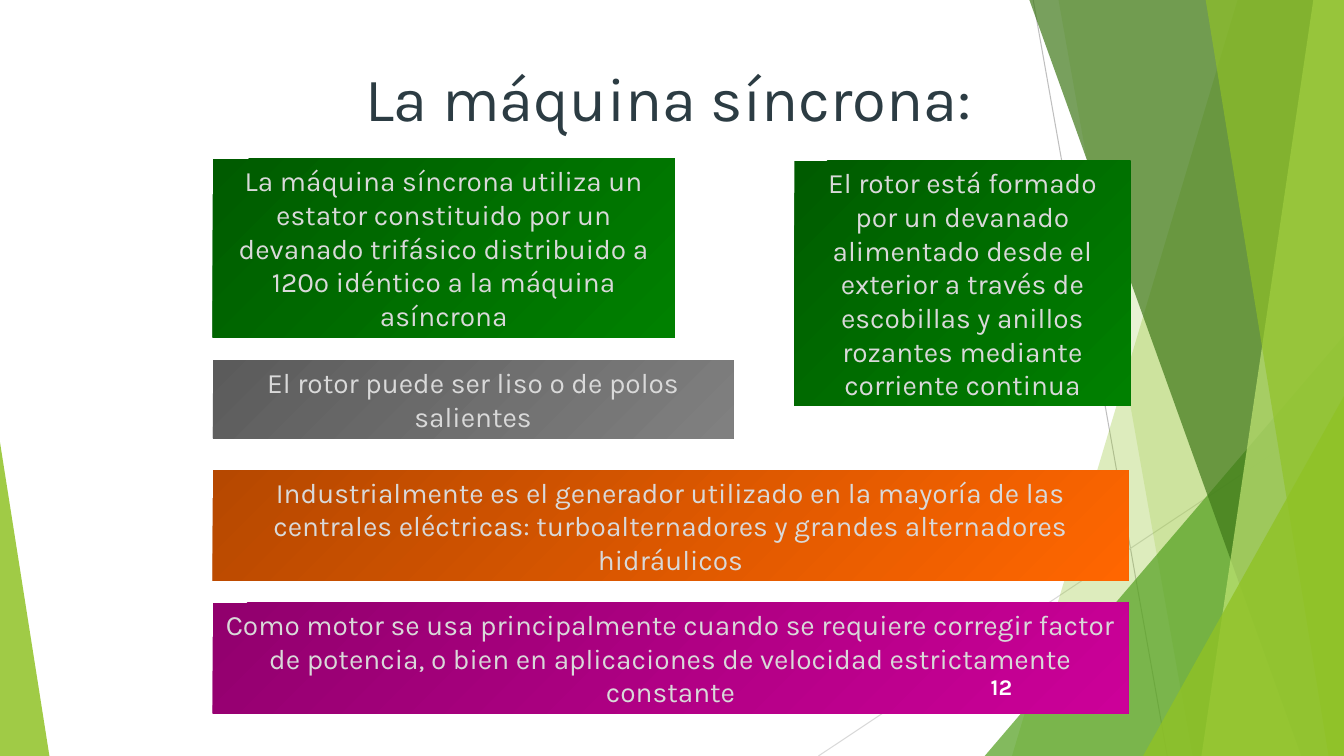
from dataclasses import dataclass

import pptx
import pptx.dml.color
import pptx.enum.dml
import pptx.enum.shapes
import pptx.enum.text
import pptx.oxml
import pptx.oxml.ns
import pptx.util

Pt = pptx.util.Pt
qn = pptx.oxml.ns.qn
Align = pptx.enum.text.PP_ALIGN
Anchor = pptx.enum.text.MSO_ANCHOR
AutoSize = pptx.enum.text.MSO_AUTO_SIZE
ShapeType = pptx.enum.shapes.MSO_SHAPE

FONT = "Karla"
WIDTH, HEIGHT = 960, 540
BAND_TOP = -0.6
GRADIENT_SHADE = 46275
COLOURS = {
    "title": "2C3C43",
    "body": "D9D9D9",
    "number": "FFFFFF",
    "green": "008000",
    "grey": "808080",
    "orange": "FF6600",
    "purple": "CC0099",
    "lime": "90C226",
    "leaf": "54A021",
    "forest": "3F7819",
    "pale": "C0E474",
    "line": "BFBFBF",
    "light line": "D9D9D9",
}


@dataclass
class Ray:
    start: tuple[float, float]
    end: tuple[float, float]
    colour: str


@dataclass
class Band:
    top_x: float
    bottom_x: float
    colour: str
    opacity: int


@dataclass
class Triangle:
    left: float
    top: float
    width: float
    apex: float
    colour: str
    opacity: int


@dataclass
class Box:
    left: float
    top: float
    width: float
    height: float
    colour: str
    text: str


RAYS = [
    Ray((738, 0), (833.8, HEIGHT), "line"),
    Ray((WIDTH, 290.2), (584.6, HEIGHT), "light line"),
]
DECORATIONS = [
    Band(884.2, 722.9, "lime", 30),
    Band(756, 851.8, "lime", 20),
    Triangle(703.4, 239.8, 256.6, 1, "leaf", 72),
    Band(735.1, 929.5, "forest", 70),
    Band(938.2, 858.2, "pale", 70),
    Band(861.1, 949, "lime", 65),
    Triangle(816.5, 283, 143.5, 1, "lime", 80),
    Triangle(0, 316, 35.3, 0, "lime", 85),
]
BOXES = [
    Box(152, 113.5, 330, 127.5, "green",
        "La máquina síncrona utiliza un estator constituido por un devanado "
        "trifásico distribuido a 120º idéntico a la máquina asíncrona"),
    Box(567.5, 115, 240, 175, "green",
        "El rotor está formado por un devanado alimentado desde el exterior "
        "a través de escobillas y anillos rozantes mediante corriente continua"),
    Box(152, 257.5, 372, 55.5, "grey",
        "El rotor puede ser liso o de polos salientes"),
    Box(152, 336, 654, 79, "orange",
        "Industrialmente es el generador utilizado en la mayoría de las "
        "centrales eléctricas: turboalternadores y grandes alternadores "
        "hidráulicos"),
    Box(152, 430.5, 654, 79, "purple",
        "Como motor se usa principalmente cuando se requiere corregir factor "
        "de potencia, o bien en aplicaciones de velocidad estrictamente "
        "constante"),
]


def colour_of(name: str) -> pptx.dml.color.RGBColor:
    return pptx.dml.color.RGBColor.from_string(COLOURS[name])


def write_text(shape, text: str, *, size: float, colour: str,
               align=Align.CENTER, anchor=Anchor.TOP, bold: bool = False,
               auto_size=AutoSize.NONE) -> None:
    frame = shape.text_frame
    frame.word_wrap = True
    frame.auto_size = auto_size
    frame.vertical_anchor = anchor
    paragraph = frame.paragraphs[0]
    paragraph.alignment = align
    run = paragraph.add_run()
    run.text = text
    run.font.name = FONT
    run.font.size = Pt(size)
    run.font.bold = bold
    run.font.color.rgb = colour_of(colour)


def add_colour_modifier(shape, tag: str, value: int) -> None:
    colour = next(shape.element.spPr.iter(qn("a:srgbClr")))
    modifier = pptx.oxml.parse_xml(
        f'<a:{tag} {pptx.oxml.ns.nsdecls("a")} val="{value}"/>')
    colour.append(modifier)


def draw_ray(shapes, ray: Ray) -> None:
    connector = shapes.add_connector(
        pptx.enum.shapes.MSO_CONNECTOR.STRAIGHT,
        *map(Pt, ray.start + ray.end))
    connector.line.color.rgb = colour_of(ray.colour)
    connector.line.width = Pt(0.75)
    connector.element.spPr.append(pptx.oxml.parse_xml(
        f'<a:effectLst {pptx.oxml.ns.nsdecls("a")}/>'))


def draw_decoration(shapes, item: Band | Triangle) -> None:
    if isinstance(item, Band):
        corners = [(WIDTH, BAND_TOP), (WIDTH, HEIGHT), (item.bottom_x, HEIGHT)]
        builder = shapes.build_freeform(Pt(item.top_x), Pt(BAND_TOP))
        builder.add_line_segments([(Pt(x), Pt(y)) for x, y in corners])
        shape = builder.convert_to_shape()
    else:
        shape = shapes.add_shape(
            ShapeType.ISOSCELES_TRIANGLE, Pt(item.left), Pt(item.top),
            Pt(item.width), Pt(HEIGHT - item.top))
        shape.adjustments[0] = item.apex
    shape.shadow.inherit = False
    shape.line.fill.background()
    shape.fill.solid()
    shape.fill.fore_color.rgb = colour_of(item.colour)
    add_colour_modifier(shape, "alpha", item.opacity * 1000)


def draw_box(shapes, box: Box) -> None:
    shape = shapes.add_shape(ShapeType.RECTANGLE, Pt(box.left), Pt(box.top),
                             Pt(box.width), Pt(box.height))
    shape.shadow.inherit = False
    shape.line.fill.background()
    shape.fill.gradient()
    shape.fill.gradient_angle = 315
    for stop in shape.fill.gradient_stops:
        stop.color.rgb = colour_of(box.colour)
    add_colour_modifier(shape, "shade", GRADIENT_SHADE)
    write_text(shape, box.text, size=20, colour="body",
               auto_size=AutoSize.SHAPE_TO_FIT_TEXT)


def main() -> None:
    presentation = pptx.Presentation()
    presentation.slide_width = Pt(WIDTH)
    presentation.slide_height = Pt(HEIGHT)
    slide = presentation.slides.add_slide(presentation.slide_layouts[5])
    shapes = slide.shapes

    title = shapes.title
    title.left, title.top = Pt(132), Pt(24)
    title.width, title.height = Pt(702), Pt(90)
    write_text(title, "La máquina síncrona: ", size=44, colour="title",
               anchor=Anchor.MIDDLE)

    for ray in RAYS:
        draw_ray(shapes, ray)
    for item in DECORATIONS:
        draw_decoration(shapes, item)
    for box in BOXES:
        draw_box(shapes, box)

    number = shapes.add_textbox(Pt(676), Pt(476), Pt(54), Pt(29))
    write_text(number, "12", size=16, colour="number", align=Align.RIGHT,
               anchor=Anchor.MIDDLE, bold=True)
    presentation.save("out.pptx")


if __name__ == "__main__":
    main()
